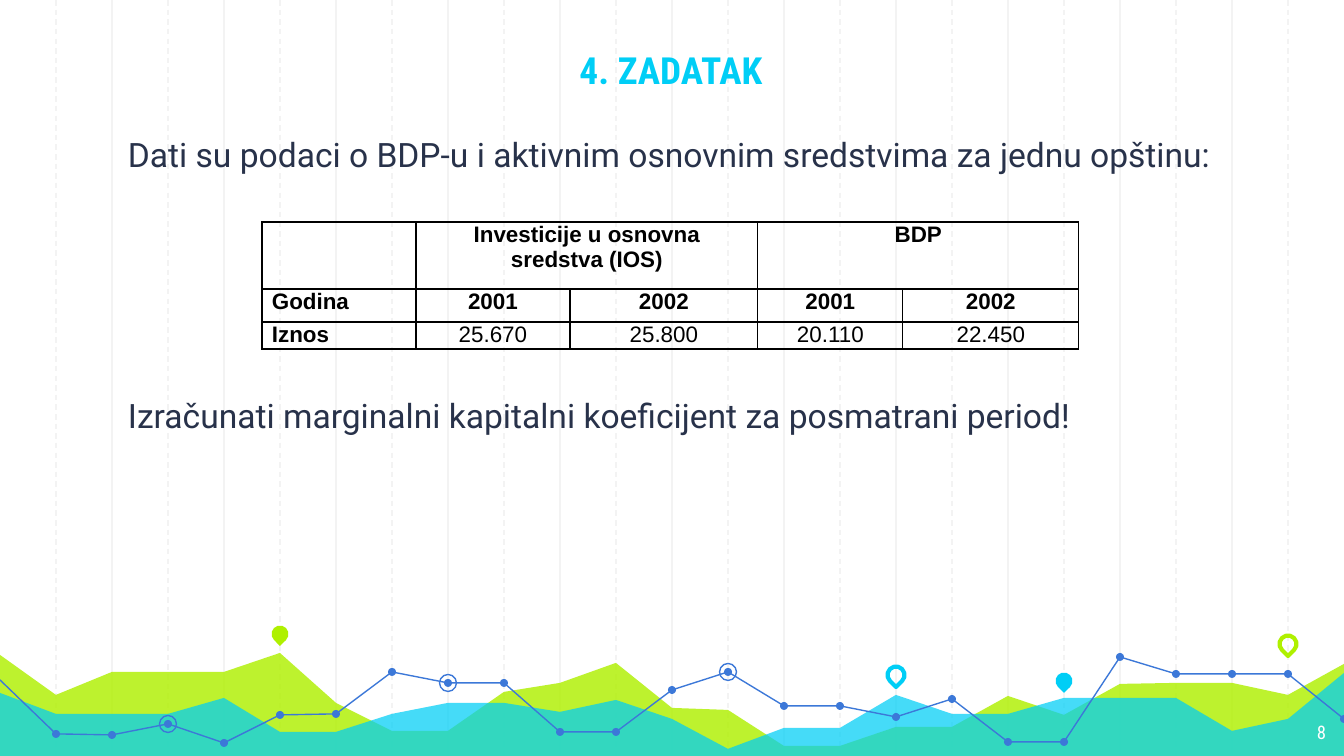
import pptx
import pptx.util
import pptx.dml.color
import pptx.enum.dml
import pptx.enum.shapes
import pptx.enum.text
import pptx.oxml
import pptx.oxml.ns
from lxml import etree

# Content
TITLE = "4. ZADATAK"
BODY = ["Dati su podaci o BDP-u i aktivnim osnovnim sredstvima za jednu opštinu:",
        "Izračunati marginalni kapitalni koeficijent za posmatrani period!"]
PAGE = "8"
TABLE = [["", "Investicije u osnovna sredstva (IOS)", None, "BDP", None],
         ["Godina", "2001", "2002", "2001", "2002"],
         ["Iznos", "25.670", "25.800", "20.110", "22.450"]]
COLS = [154, 154, 188, 145, 176]
ROWS = [67, 33, 25]

# Decoration heights in px, one per grid column (0 to 24)
GREEN = [655, 695, 672, 672, 672, 653, 703, 731, 731, 692, 683, 663, 708, 710, 746,
         746, 727, 727, 696, 715, 684, 683, 683, 695, 664]
CYAN = [693, 714, 714, 714, 698, 732, 732, 714, 703, 703, 712, 700, 719, 749, 728,
        728, 695, 714, 714, 698, 698, 698, 731, 719, 673]
TREND = [680, 734, 735, 724, 743, 715, 714, 672, 683, 683, 732, 732, 690, 672, 706,
         706, 717, 699, 742, 742, 657, 674, 674, 674, 719]
TREND_PARTS = [(0, 11), (11, 20), (20, 24)]
RINGS = [3, 8, 13]
PINS = [(5, 634, "green", True), (16, 675, "cyan", False),
        (19, 681, "cyan", True), (23, 644, "green", False)]  # column, y, colour, filled

THEME = {
    "green": "AFF000", "cyan": "00CEF6", "blue": "3C78D8", "grid": "F3F3F3",
    "ink": "28324A", "black": "000000", "white": "FFFFFF",
    "head": "Roboto Condensed", "text": "Roboto", "cell": "Arial",
    "title_pt": 20, "body_pt": 18, "cell_pt": 12, "page_pt": 10,
}
W, H, STEP, BOTTOM = 1344, 756, 56, 758
SCALE = 914400 / 134.4
ALIGN = pptx.enum.text.PP_ALIGN
SHAPE = pptx.enum.shapes.MSO_SHAPE


def px(n):
    return pptx.util.Emu(round(n * SCALE))


def rgb(name):
    return pptx.dml.color.RGBColor.from_string(THEME[name])


def write(p, text, font="text", size="body_pt", color="ink", bold=False,
          align=ALIGN.LEFT, before=0):
    p.alignment = align
    p.space_before = pptx.util.Pt(before)
    r = p.add_run()
    r.text = text
    r.font.name, r.font.size = THEME[font], pptx.util.Pt(THEME[size])
    r.font.bold, r.font.color.rgb = bold, rgb(color)


def text_frame(s, x, y, w, h, left=13):
    tf = s.shapes.add_textbox(px(x), px(y), px(w), px(h)).text_frame
    tf.word_wrap = True
    tf.margin_left = px(left)
    tf.margin_top = tf.margin_right = tf.margin_bottom = px(13)
    return tf


def paint(sp, fill=None, line=None, width=0.75, alpha=None):
    sp.shadow.inherit = False
    if fill:
        sp.fill.solid()
        sp.fill.fore_color.rgb = rgb(fill)
    else:
        sp.fill.background()
    if alpha:
        clr = sp.fill._xPr.find(".//" + pptx.oxml.ns.qn("a:srgbClr"))
        etree.SubElement(clr, pptx.oxml.ns.qn("a:alpha"), val=str(alpha * 1000))
    if line:
        sp.line.color.rgb = rgb(line)
        sp.line.width = pptx.util.Pt(width)
    else:
        sp.line.fill.background()


def outline(s, points, close):
    fb = s.shapes.build_freeform(*points[0], scale=SCALE)
    fb.add_line_segments(points[1:], close=close)
    return fb.convert_to_shape()


def centred(s, kind, x, y, size):
    return s.shapes.add_shape(kind, px(x - size / 2), px(y - size / 2), px(size), px(size))


def grid_line(s, col):
    c = s.shapes.add_connector(pptx.enum.shapes.MSO_CONNECTOR.STRAIGHT,
                               px(col * STEP), 0, px(col * STEP), px(H))
    c.line.color.rgb = rgb("grid")
    c.line.width = pptx.util.Pt(0.75)
    if col % 2:
        c.line.dash_style = pptx.enum.dml.MSO_LINE.DASH
    etree.SubElement(c._element.spPr, pptx.oxml.ns.qn("a:effectLst"))


def border(cell):
    tcPr = cell._tc.get_or_add_tcPr()
    for side in ("lnL", "lnR", "lnT", "lnB"):
        tcPr.append(pptx.oxml.parse_xml(
            f'<a:{side} {pptx.oxml.ns.nsdecls("a")} w="9525"><a:solidFill>'
            f'<a:srgbClr val="{THEME["black"]}"/></a:solidFill></a:{side}>'))


prs = pptx.Presentation()
prs.slide_width, prs.slide_height = px(W), px(H)
s = prs.slides.add_slide(prs.slide_layouts[6])

# Background grid: solid on even columns, dashed on odd
for col in [*range(2, 24, 2), *range(1, 24, 2)]:
    grid_line(s, col)

# Area silhouettes
for heights, color, alpha in ((GREEN, "green", 82), (CYAN, "cyan", 73)):
    ridge = [(i * STEP, y) for i, y in enumerate(heights)]
    paint(outline(s, ridge + [(W, BOTTOM), (0, BOTTOM)], True), fill=color, alpha=alpha)

# Trend line with dots and rings
trend = [(i * STEP, y) for i, y in enumerate(TREND)]
for first, last in TREND_PARTS:
    paint(outline(s, trend[first:last + 1], False), line="blue")
for x, y in trend[1:]:
    paint(centred(s, SHAPE.OVAL, x, y, 8), fill="blue")
for col in RINGS:
    paint(centred(s, SHAPE.OVAL, *trend[col], 17), line="blue")

# Map pins
for col, y, color, filled in PINS:
    pin = centred(s, SHAPE.TEAR, col * STEP, y, 17)
    pin.rotation = 135
    if filled:
        paint(pin, fill=color)
    else:
        paint(pin, line=color, width=2.25)

# Page number, body and title
write(text_frame(s, 1258, 710, 81, 47).paragraphs[0], PAGE, font="head",
      size="page_pt", color="white", align=ALIGN.RIGHT)

tf = text_frame(s, 99, 121, 1142, 448, left=29)
write(tf.paragraphs[0], BODY[0])
write(tf.add_paragraph(), BODY[1], before=118)

tf = text_frame(s, 157, 0, 1028, 105)
tf.vertical_anchor = pptx.enum.text.MSO_ANCHOR.BOTTOM
write(tf.paragraphs[0], TITLE, font="head", size="title_pt", color="cyan",
      bold=True, align=ALIGN.CENTER)

# Table
table = s.shapes.add_table(len(ROWS), len(COLS), px(262), px(222),
                           px(sum(COLS)), px(sum(ROWS))).table
table.first_row = table.horz_banding = False
for column, width in zip(table.columns, COLS):
    column.width = px(width)
for row, height in zip(table.rows, ROWS):
    row.height = px(height)
for i, values in enumerate(TABLE):
    for j, value in enumerate(values):
        cell = table.cell(i, j)
        border(cell)
        cell.fill.background()
        cell.margin_left = cell.margin_right = px(10)
        cell.margin_top = cell.margin_bottom = 0
        if value:
            write(cell.text_frame.paragraphs[0], value, font="cell", size="cell_pt",
                  color="black", bold=i < 2 or j == 0,
                  align=ALIGN.CENTER if j else ALIGN.LEFT)
        if value is None:
            table.cell(i, j - 1).merge(cell)

prs.save("out.pptx")
